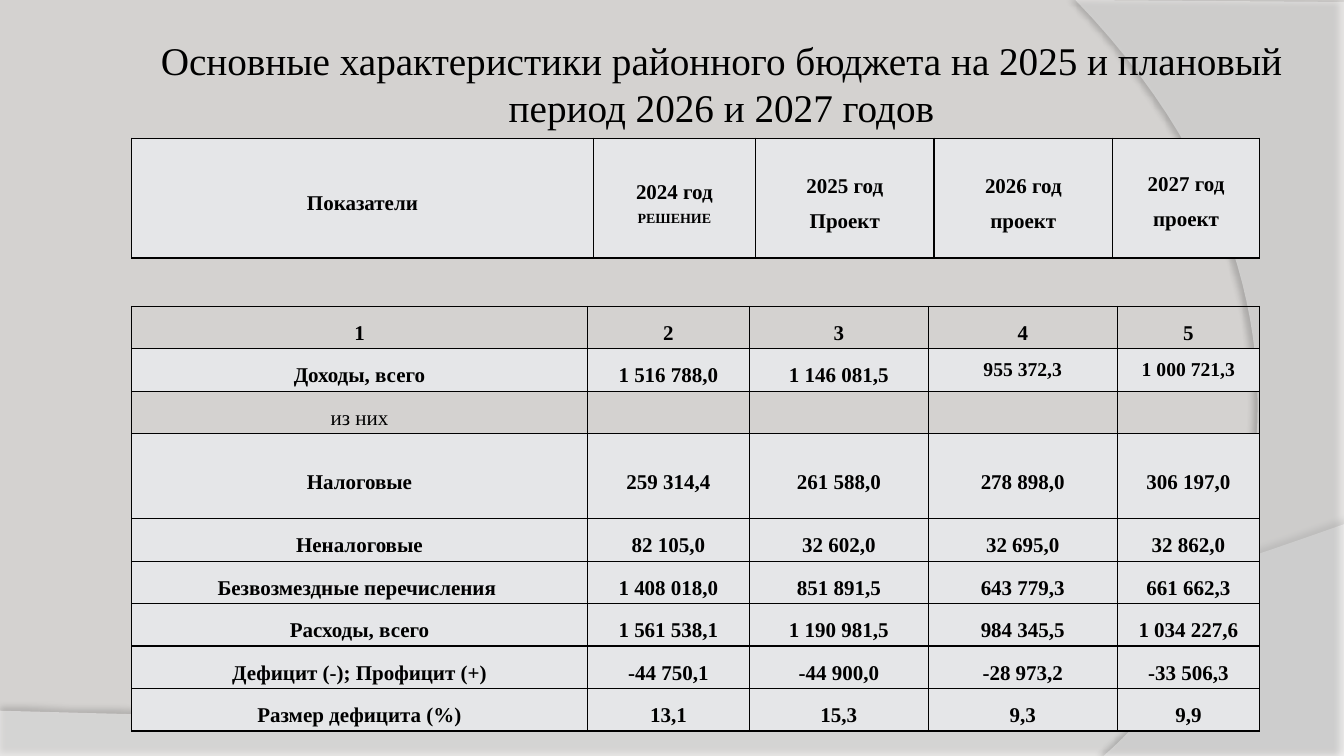
from dataclasses import dataclass

from lxml import etree
from pptx import Presentation
from pptx import util as u
from pptx.dml.color import RGBColor
from pptx.enum import text
from pptx.oxml import ns


@dataclass(frozen=True)
class Theme:
    """Colours, font and type sizes of the slide."""
    background: str = "D4D2D0"
    wave: str = "FFFFFF"
    cell: str = "E5E6E8"
    ink: str = "000000"
    font: str = "Times New Roman"
    title: int = 28
    body: int = 15
    total: int = 14
    note: int = 10
    border: int = 1


THEME = Theme()
HEADER_WIDTHS = (11.63, 4.09, 4.5, 4.5, 3.7)
FIGURE_WIDTHS = (11.48, 4.09, 4.5, 4.77, 3.58)
ROW_HEIGHT = 1.07
HEADERS = (
    ("Показатели",),
    ("2024 год ",),
    ("2025 год", "Проект"),
    ("2026 год", "проект"),
    ("2027 год", "проект"),
)
FIGURES = (
    ("1", "2", "3", "4", "5"),
    ("Доходы, всего", "1 516 788,0", "1 146 081,5", "955 372,3", "1 000 721,3"),
    ("из них", "", "", "", ""),
    ("Налоговые", "259 314,4", "261 588,0", "278 898,0", "306 197,0"),
    ("Неналоговые", "82 105,0", "32 602,0", "32 695,0", "32 862,0"),
    ("Безвозмездные перечисления ", "1 408 018,0", "851 891,5", "643 779,3", "661 662,3"),
    ("Расходы, всего", "1 561 538,1", "1 190 981,5", "984 345,5", "1 034 227,6"),
    ("Дефицит (-); Профицит (+)", "-44 750,1", "-44 900,0", "-28 973,2", "-33 506,3"),
    ("Размер дефицита (%)", "13,1", "15,3", "9,3", "9,9"),
)
NUMBERING_ROW, TOTAL_ROW, SUBHEAD_ROW, TAX_ROW = range(4)


def add_element(parent, tag, **attributes):
    """Append a DrawingML element and return it."""
    element = etree.SubElement(parent, ns.qn(tag))
    for name, value in attributes.items():
        element.set(name, str(value))
    return element


def curve_points(start, first, second, end, steps=48):
    """Return points along a cubic curve, without its start."""
    points = []
    for step in range(1, steps + 1):
        t = step / steps
        weights = ((1 - t) ** 3, 3 * t * (1 - t) ** 2, 3 * t * t * (1 - t), t ** 3)
        points.append(tuple(
            sum(weight * value for weight, value in zip(weights, values))
            for values in zip(start, first, second, end)))
    return points


def add_wave(slide, left, top, corners, curve, opacity, shade, distance, direction):
    """Draw a translucent background wave with its corner at left, top."""
    outline = corners + curve_points(corners[-1], *curve)
    points = [(u.Cm(left + x), u.Cm(top + y)) for x, y in outline]
    builder = slide.shapes.build_freeform(*points[0])
    builder.add_line_segments(points[1:], close=True)
    shape = builder.convert_to_shape()
    shape.shadow.inherit = False
    shape.line.fill.background()
    shape.fill.solid()
    shape.fill.fore_color.rgb = RGBColor.from_string(THEME.wave)
    properties = shape.element.spPr
    fill_color = properties.find(ns.qn("a:solidFill")).find(ns.qn("a:srgbClr"))
    add_element(fill_color, "a:alpha", val=opacity * 1000)
    shadow = add_element(
        properties.find(ns.qn("a:effectLst")), "a:outerShdw", blurRad=u.Pt(4),
        dist=u.Pt(distance), dir=direction * 60000, algn="ctr", rotWithShape=0)
    shadow_color = add_element(shadow, "a:srgbClr", val=THEME.ink)
    add_element(shadow_color, "a:alpha", val=shade * 1000)


def style_paragraph(paragraph, size, bold=True, spacing=1.5):
    """Centre a paragraph and set its type."""
    paragraph.alignment = text.PP_ALIGN.CENTER
    paragraph.line_spacing = spacing
    paragraph.font.name = THEME.font
    paragraph.font.size = u.Pt(size)
    paragraph.font.bold = bold
    paragraph.font.color.rgb = RGBColor.from_string(THEME.ink)


def add_title(slide, left, top, width, height):
    """Place the slide title in its box."""
    frame = slide.shapes.add_textbox(*map(u.Cm, (left, top, width, height))).text_frame
    frame.word_wrap = True
    frame.vertical_anchor = text.MSO_ANCHOR.MIDDLE
    frame.margin_left = frame.margin_right = u.Cm(0.13)
    frame.margin_top = frame.margin_bottom = u.Cm(0.13)
    frame.text = "Основные характеристики районного бюджета на 2025 и плановый период 2026 и 2027 годов"
    style_paragraph(frame.paragraphs[0], THEME.title, bold=False, spacing=1.0)


def fill_cell(cell, lines, size=THEME.body, bold=True, spacing=1.5, filled=True):
    """Write centred lines into a bordered cell."""
    cell.text = "\n".join(lines)
    cell.vertical_anchor = text.MSO_ANCHOR.MIDDLE
    cell.margin_left = cell.margin_right = u.Cm(0.19)
    cell.margin_top = cell.margin_bottom = 0
    for paragraph in cell.text_frame.paragraphs:
        style_paragraph(paragraph, size, bold, spacing)
    properties = cell._tc.get_or_add_tcPr()
    for side in ("a:lnL", "a:lnR", "a:lnT", "a:lnB"):
        line = add_element(properties, side, w=u.Pt(THEME.border))
        add_element(add_element(line, "a:solidFill"), "a:srgbClr", val=THEME.ink)
    if filled:
        cell.fill.solid()
        cell.fill.fore_color.rgb = RGBColor.from_string(THEME.cell)
    else:
        cell.fill.background()


def add_grid(slide, left, top, widths, heights):
    """Add an unbanded table with the given columns and rows."""
    table = slide.shapes.add_table(
        len(heights), len(widths), u.Cm(left), u.Cm(top),
        u.Cm(sum(widths)), u.Cm(sum(heights))).table
    table.first_row = table.horz_banding = False
    for column, width in zip(table.columns, widths):
        column.width = u.Cm(width)
    for row, height in zip(table.rows, heights):
        row.height = u.Cm(height)
    return table


def add_header_table(slide, left, top, height):
    """Place the table of column headings."""
    table = add_grid(slide, left, top, HEADER_WIDTHS, [height])
    for column, lines in enumerate(HEADERS):
        fill_cell(table.cell(0, column), lines)
    decision = table.cell(0, 1).text_frame.paragraphs[0].add_run()
    decision.text = "РЕШЕНИЕ"
    decision.font.size = u.Pt(THEME.note)
    table.cell(0, len(HEADERS) - 1).margin_bottom = u.Cm(0.1)


def add_figure_table(slide, left, top):
    """Place the table of budget figures."""
    heights = [ROW_HEIGHT * (2 if row == TAX_ROW else 1) for row in range(len(FIGURES))]
    table = add_grid(slide, left, top, FIGURE_WIDTHS, heights)
    for row, values in enumerate(FIGURES):
        for column, value in enumerate(values):
            compact = row == TOTAL_ROW and column >= 3
            fill_cell(
                table.cell(row, column), [value],
                size=THEME.total if compact else THEME.body,
                bold=row != SUBHEAD_ROW,
                spacing=1.0 if compact else 1.5,
                filled=row not in (NUMBERING_ROW, SUBHEAD_ROW))


def add_background(slide):
    """Colour the slide and draw its two waves."""
    slide.background.fill.solid()
    slide.background.fill.fore_color.rgb = RGBColor.from_string(THEME.background)
    add_wave(slide, 0, 13.21, [(0, 4.7), (0, 5.84), (33.87, 5.84), (33.87, 0)],
             [(18.92, 5.31), (13.23, 5.05), (0, 4.7)], 45, 35, 3.5, 270)
    add_wave(slide, 27.1, 0, [(6.77, 0.05), (6.77, 19.05), (0.71, 19.05)],
             [(4.55, 15.72), (7.37, 7.62), (0, 0)], 40, 45, 4, 180)


def main():
    """Build and save the budget slide."""
    presentation = Presentation()
    presentation.slide_width, presentation.slide_height = u.Cm(33.87), u.Cm(19.05)
    slide = presentation.slides.add_slide(presentation.slide_layouts[6])
    add_background(slide)
    add_title(slide, 3.56, 1.12, 29.24, 1.96)
    add_header_table(slide, 3.32, 3.48, 3.02)
    add_figure_table(slide, 3.32, 7.72)
    presentation.save("out.pptx")


if __name__ == "__main__":
    main()
